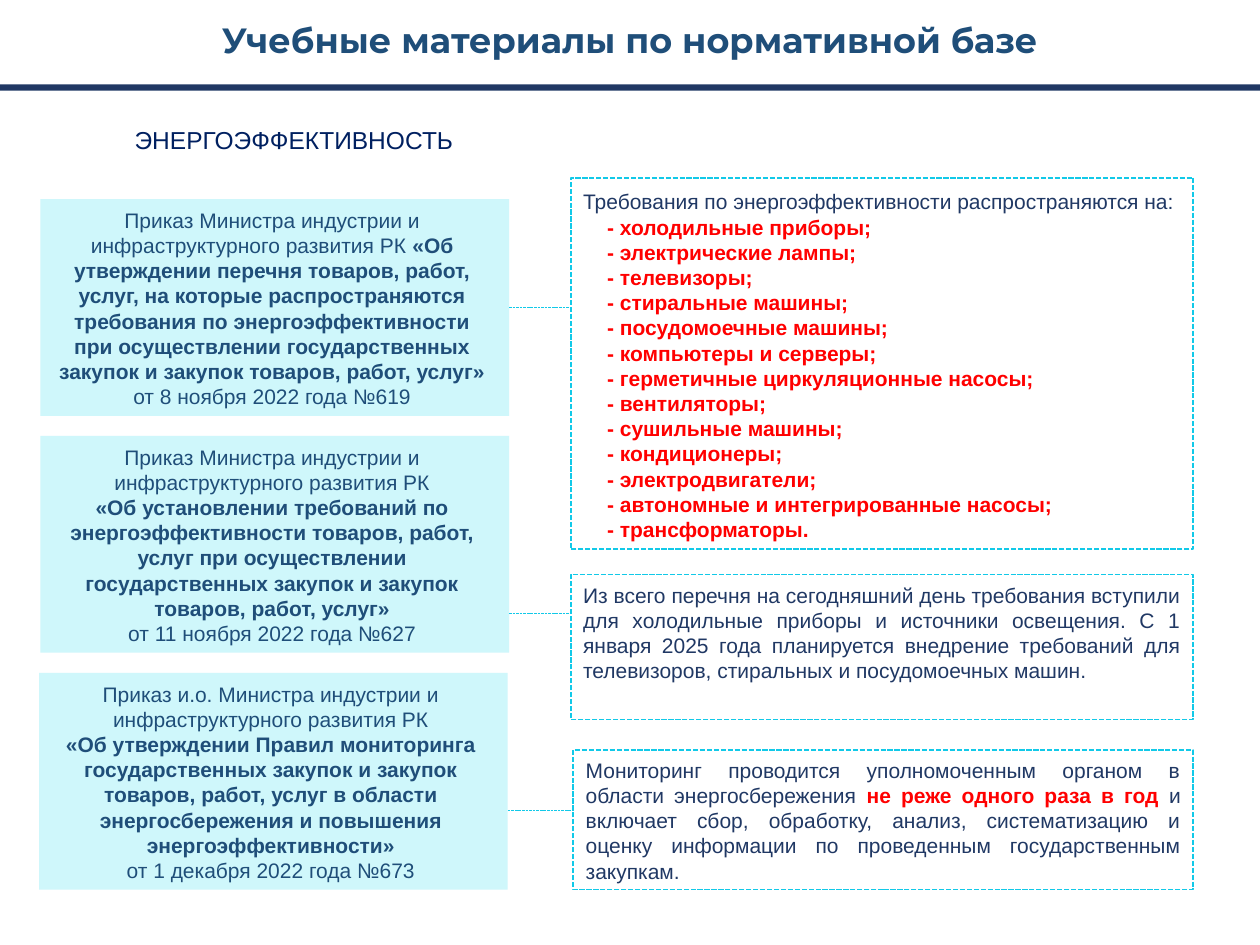
from dataclasses import dataclass

from lxml import etree
from pptx import Presentation
from pptx.dml.color import RGBColor
from pptx.enum.dml import MSO_LINE
from pptx.enum.shapes import MSO_CONNECTOR, MSO_SHAPE
from pptx.enum.text import MSO_ANCHOR, PP_ALIGN
from pptx.oxml.ns import qn
from pptx.util import Inches, Pt

RECTANGLE = MSO_SHAPE.RECTANGLE
STRAIGHT = MSO_CONNECTOR.STRAIGHT
DASH = MSO_LINE.SQUARE_DOT
CENTER, JUSTIFY = PP_ALIGN.CENTER, PP_ALIGN.JUSTIFY
TOP, MIDDLE = MSO_ANCHOR.TOP, MSO_ANCHOR.MIDDLE
RIGHT_SIDE = 3

# The grid has 100 columns and 75 rows
COLUMNS, ROWS = 100, 75
WIDTH, HEIGHT = Inches(10), Inches(7.5)


@dataclass(frozen=True)
class Theme:
    heading_font: str = "Montserrat"
    body_font: str = "Arial"
    title_size: int = 20
    section_size: int = 14
    body_size: int = 12
    steel: str = "1F4E79"
    navy: str = "203864"
    section: str = "002060"
    alert: str = "FF0000"
    card: str = "CFF7FB"
    dash: str = "12C9E8"


def apply(target, values):
    for name, value in values.items():
        setattr(target, name, value)


class SlideBuilder:
    def __init__(self, slide, theme):
        self.slide = slide
        self.theme = theme

    def place(self, columns, rows):
        return round(columns * WIDTH / COLUMNS), round(rows * HEIGHT / ROWS)

    def bounds(self, left, top, width, height):
        return *self.place(left, top), *self.place(width, height)

    def fill_text(self, box, paragraphs, color, align, insets=(1, 0.5, 1, 0.5),
                  anchor=TOP, size=None, font=None, spacing=1.0):
        """Each paragraph is (indent in columns, [(text, bold, colour or None)])."""
        frame = box.text_frame
        sides = ("margin_left", "margin_top", "margin_right", "margin_bottom")
        margins = [self.place(inset, 0)[0] for inset in insets]
        apply(frame, {"word_wrap": True, "vertical_anchor": anchor,
                      **dict(zip(sides, margins))})
        for index, (indent, spans) in enumerate(paragraphs):
            para = frame.add_paragraph() if index else frame.paragraphs[0]
            apply(para, {"alignment": align, "line_spacing": spacing})
            if indent:
                para._p.get_or_add_pPr().set("indent", str(self.place(indent, 0)[0]))
            for text, bold, span_color in spans:
                span = para.add_run()
                span.text = text
                apply(span.font, {"name": font or self.theme.body_font,
                                  "size": Pt(size or self.theme.body_size),
                                  "bold": bold})
                span.font.color.rgb = RGBColor.from_string(span_color or color)

    def title(self, text, bounds):
        box = self.slide.shapes.title
        apply(box, dict(zip(("left", "top", "width", "height"), self.bounds(*bounds))))
        self.fill_text(box, [(0, [(text, True, None)])], self.theme.steel, CENTER,
                       anchor=MIDDLE, size=self.theme.title_size,
                       font=self.theme.heading_font)

    def section(self, text, bounds):
        box = self.slide.shapes.add_textbox(*self.bounds(*bounds))
        self.fill_text(box, [(0, [(text, False, None)])], self.theme.section, JUSTIFY,
                       size=self.theme.section_size, spacing=1.15)

    def rectangle(self, bounds, fill=None, outline=False):
        box = self.slide.shapes.add_shape(RECTANGLE, *self.bounds(*bounds))
        box.shadow.inherit = False
        if fill:
            box.fill.solid()
            box.fill.fore_color.rgb = RGBColor.from_string(fill)
        else:
            box.fill.background()
        if outline:
            self.dashed(box.line, 1)
        else:
            box.line.fill.background()
        return box

    def dashed(self, line, points):
        line.color.rgb = RGBColor.from_string(self.theme.dash)
        apply(line, {"width": Pt(points), "dash_style": DASH})

    def card(self, bounds, paragraphs):
        box = self.rectangle(bounds, fill=self.theme.card)
        self.fill_text(box, paragraphs, self.theme.steel, CENTER, (1.3, 0.65, 1.7, 0))
        return box

    def panel(self, bounds, paragraphs, top_inset):
        box = self.rectangle(bounds, outline=True)
        self.fill_text(box, paragraphs, self.theme.navy, JUSTIFY, (1, top_inset, 1, 0))
        return box

    def link(self, card, panel, row):
        """Level line from card to panel; without a row it leaves the card's middle."""
        y = card.top + card.height // 2 if row is None else self.place(0, row)[1]
        line = self.slide.shapes.add_connector(
            STRAIGHT, card.left + card.width, y, panel.left, y)
        if row is None:
            line.begin_connect(card, RIGHT_SIDE)
        self.dashed(line.line, 0.5)
        etree.SubElement(line._element.spPr, qn("a:effectLst"))


THEME = Theme()
ISSUER = "Приказ Министра индустрии и инфраструктурного развития РК"

# Orders on the left
ORDERS = [
    [(0, [(ISSUER + " ", False, None),
          ("«Об утверждении перечня товаров, работ, услуг, на которые "
           "распространяются требования по энергоэффективности при осуществлении "
           "государственных закупок и закупок товаров, работ, услуг» ", True, None),
          ("от 8 ноября 2022 года №619", False, None)])],
    [(0, [(ISSUER, False, None)]),
     (0, [("«Об установлении требований по энергоэффективности товаров, работ, "
           "услуг при осуществлении государственных закупок и закупок товаров, "
           "работ, услуг»", True, None)]),
     (0, [("от 11 ноября 2022 года №627", False, None)])],
    [(0, [(ISSUER.replace("Приказ", "Приказ и.о."), False, None)]),
     (0, [("«Об утверждении Правил мониторинга государственных закупок и закупок "
           "товаров, работ, услуг в области энергосбережения и повышения "
           "энергоэффективности»", True, None)]),
     (0, [("от 1 декабря 2022 года №673", False, None)])],
]
CARD_LEFTS = (3.2, 3.2, 3.1)
CARD_TOP, CARD_PITCH, CARD_WIDTH, CARD_HEIGHT = 15.8, 18.8, 37.2, 17.2

# Explanations on the right
GOODS = ["холодильные приборы", "электрические лампы", "телевизоры",
         "стиральные машины", "посудомоечные машины", "компьютеры и серверы",
         "герметичные циркуляционные насосы", "вентиляторы", "сушильные машины",
         "кондиционеры", "электродвигатели",
         "автономные и интегрированные насосы", "трансформаторы"]
GOODS_LINES = [
    (1.9, [(f"- {name}{'.' if name == GOODS[-1] else ';'}", True, THEME.alert)])
    for name in GOODS]
EXPLANATIONS = [
    [(0, [("Требования по энергоэффективности распространяются на:", False, None)]),
     *GOODS_LINES],
    [(0, [("Из всего перечня на сегодняшний день требования вступили для "
           "холодильные приборы и источники освещения. С 1 января 2025 года "
           "планируется внедрение требований для телевизоров, стиральных и "
           "посудомоечных машин.", False, None)])],
    [(0, [("Мониторинг проводится уполномоченным органом в области "
           "энергосбережения ", False, None),
          ("не реже одного раза в год ", True, THEME.alert),
          ("и включает сбор, обработку, анализ, систематизацию и оценку информации "
           "по проведенным государственным закупкам.", False, None)])],
]
PANEL_BOUNDS = [(45.3, 14.1, 49.4, 29.5), (45.3, 45.6, 49.4, 11.5),
                (45.5, 59.5, 49.2, 11.1)]
PANEL_INSETS = (0.9, 0.6, 0.6)
LINK_ROWS = (None, 48.7, 64.3)


def main():
    deck = Presentation()
    apply(deck, {"slide_width": WIDTH, "slide_height": HEIGHT})
    builder = SlideBuilder(deck.slides.add_slide(deck.slide_layouts[5]), THEME)

    # Header
    builder.title("Учебные материалы по нормативной базе", (0, 0.9, 100, 4.4))
    builder.rectangle((0, 6.7, 100, 0.5), fill=THEME.navy)
    builder.section("ЭНЕРГОЭФФЕКТИВНОСТЬ", (9.7, 9.1, 75.7, 3.5))

    # Orders joined to their explanations
    cards = [builder.card((left, CARD_TOP + index * CARD_PITCH,
                           CARD_WIDTH, CARD_HEIGHT), order)
             for index, (left, order) in enumerate(zip(CARD_LEFTS, ORDERS))]
    panels = [builder.panel(*parts)
              for parts in zip(PANEL_BOUNDS, EXPLANATIONS, PANEL_INSETS)]
    for card, panel, row in zip(cards, panels, LINK_ROWS):
        builder.link(card, panel, row)

    deck.save("out.pptx")


if __name__ == "__main__":
    main()
